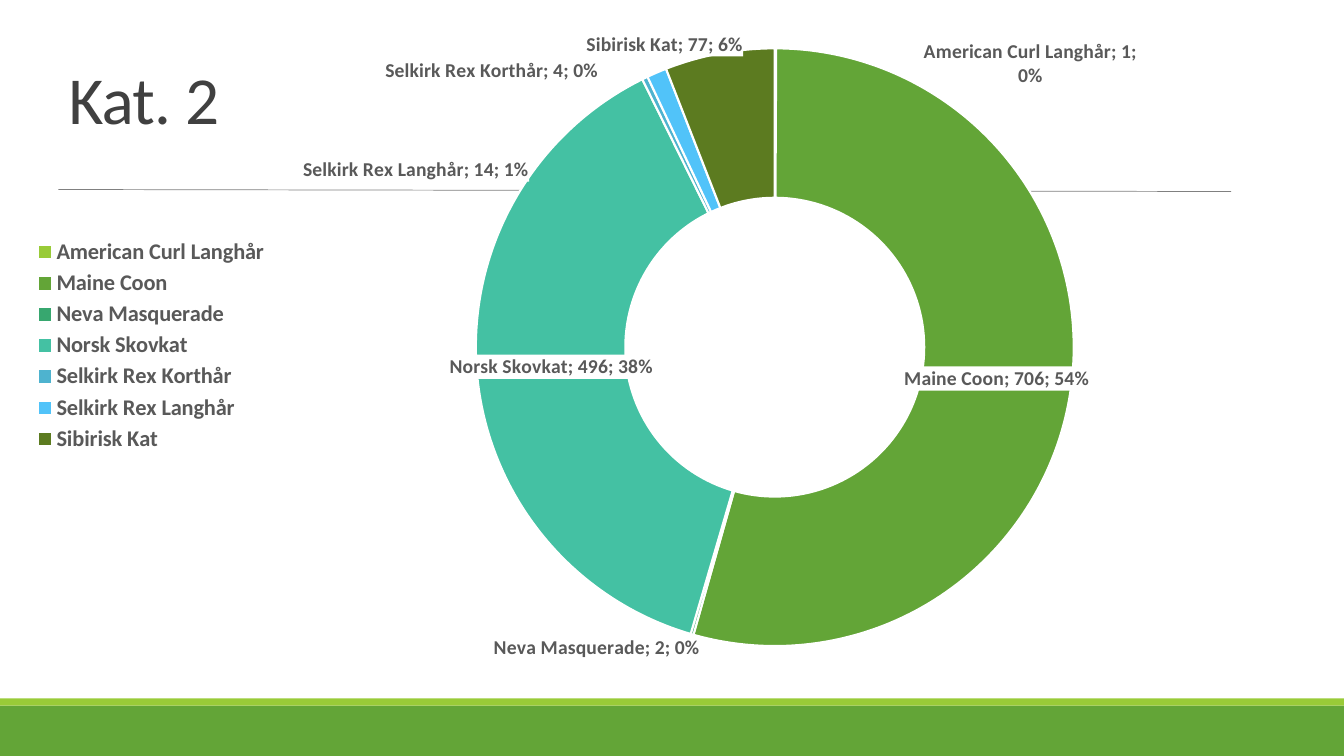
from copy import deepcopy
from dataclasses import dataclass

from pptx import Presentation
from pptx.chart.chart import Chart
from pptx.chart.data import CategoryChartData
from pptx.dml.color import RGBColor
from pptx.enum.chart import XL_CHART_TYPE, XL_LEGEND_POSITION
from pptx.enum.shapes import MSO_CONNECTOR, MSO_SHAPE
from pptx.enum.text import MSO_ANCHOR, PP_ALIGN
from pptx.oxml import parse_xml
from pptx.oxml.ns import nsdecls, qn
from pptx.slide import Slide
from pptx.util import Inches, Pt

DOUGHNUT = XL_CHART_TYPE.DOUGHNUT
LEGEND_LEFT = XL_LEGEND_POSITION.LEFT
STRAIGHT = MSO_CONNECTOR.STRAIGHT
RECTANGLE = MSO_SHAPE.RECTANGLE
MIDDLE = MSO_ANCHOR.MIDDLE
ALIGN_LEFT = PP_ALIGN.LEFT

FONT = "Calibri"
COLORS = {
    "title": "404040",
    "text": "595959",
    "rule": "808080",
    "white": "FFFFFF",
    "lime": "99CB38",
    "green": "63A537",
    "emerald": "37A76F",
    "teal": "44C1A3",
    "blue": "4EB3CF",
    "sky": "51C3F9",
    "olive": "5C7B20",
}
SLIDE_WIDTH, SLIDE_HEIGHT = 13.33, 7.5
CHART_LEFT, CHART_TOP, CHART_WIDTH, CHART_HEIGHT = 0.2, 0.31, 12.66, 6.24


@dataclass(frozen=True)
class Breed:
    """A cat breed with its count, colour and label shift in inches."""

    name: str
    count: int
    color: str
    label_shift: tuple[float, float] | None = None


@dataclass(frozen=True)
class Band:
    """A full-width footer band."""

    top: float
    height: float
    color: str


BREEDS = [
    Breed("American Curl Langhår", 1, "lime", (2.53, -0.59)),
    Breed("Maine Coon", 706, "green"),
    Breed("Neva Masquerade", 2, "emerald", (-1.15, 0.86)),
    Breed("Norsk Skovkat", 496, "teal"),
    Breed("Selkirk Rex Korthår", 4, "blue", (-1.84, -0.74)),
    Breed("Selkirk Rex Langhår", 14, "sky", (-2.68, 0.28)),
    Breed("Sibirisk Kat", 77, "olive", (-0.68, -0.82)),
]
BANDS = [Band(7, 0.5, "green"), Band(6.93, 0.07, "lime")]


def rgb(name: str) -> RGBColor:
    """Return a named colour."""
    return RGBColor.from_string(COLORS[name])


def layout_xml(x: float, y: float, size: tuple[float, float] | None = None, inner: bool = False) -> str:
    """Describe a manual chart layout given in inches."""
    target = '<c:layoutTarget val="inner"/>' if inner else ""
    modes = extent = ""
    if size:
        modes = '<c:xMode val="edge"/><c:yMode val="edge"/>'
        extent = f'<c:w val="{size[0] / CHART_WIDTH}"/><c:h val="{size[1] / CHART_HEIGHT}"/>'
    position = f'<c:x val="{x / CHART_WIDTH}"/><c:y val="{y / CHART_HEIGHT}"/>'
    return (
        f'<c:layout {nsdecls("c")}><c:manualLayout>{target}{modes}{position}{extent}'
        "</c:manualLayout></c:layout>"
    )


def add_band(slide: Slide, band: Band) -> None:
    """Draw a footer band."""
    shape = slide.shapes.add_shape(
        RECTANGLE, 0, Inches(band.top), Inches(SLIDE_WIDTH), Inches(band.height)
    )
    shape.shadow.inherit = False
    shape.fill.solid()
    shape.fill.fore_color.rgb = rgb(band.color)
    shape.line.fill.background()


def add_rule(slide: Slide) -> None:
    """Draw the thin line below the title."""
    rule = slide.shapes.add_connector(
        STRAIGHT, Inches(0.58), Inches(1.88), Inches(12.21), Inches(1.9)
    )
    rule.line.color.rgb = rgb("rule")
    rule.line.width = Pt(0.5)
    rule._element.spPr.append(parse_xml(f'<a:effectLst {nsdecls("a")}/>'))


def format_title(slide: Slide) -> None:
    """Fill and place the title."""
    title = slide.shapes.title
    title.left, title.top = Inches(0.58), Inches(0.31)
    title.width, title.height = Inches(11.62), Inches(1.45)
    title.text_frame.text = "Kat. 2"
    title.text_frame.vertical_anchor = MIDDLE
    paragraph = title.text_frame.paragraphs[0]
    paragraph.alignment = ALIGN_LEFT
    paragraph.line_spacing = 0.85
    run = paragraph.runs[0]
    run.font.name = FONT
    run.font.size = Pt(48)
    run.font.color.rgb = rgb("title")
    run._r.get_or_add_rPr().set("spc", "-50")


def format_legend(chart: Chart) -> None:
    """Place the legend at the left."""
    chart.has_legend = True
    legend = chart.legend
    legend.position = LEGEND_LEFT
    legend.include_in_layout = False
    legend.font.name = FONT
    legend.font.size = Pt(16)
    legend.font.bold = True
    legend.font.color.rgb = rgb("text")
    for layout in legend._element.findall(qn("c:layout")):
        legend._element.remove(layout)
    position = legend._element.find(qn("c:legendPos"))
    position.addnext(parse_xml(layout_xml(0.1, 2.02, (2.4, 2.2))))


def format_labels(chart: Chart) -> None:
    """Show name, count and share, and move the small slices' labels."""
    labels = chart.plots[0].series[0].data_labels
    labels.show_value = labels.show_category_name = labels.show_percentage = True
    labels.font.name = FONT
    labels.font.size = Pt(14)
    labels.font.bold = True
    labels.font.color.rgb = rgb("text")
    element = labels._element
    for leader in element.findall(qn("c:showLeaderLines")):
        element.remove(leader)
    element.find(qn("c:txPr")).addprevious(parse_xml(
        f'<c:spPr {nsdecls("c", "a")}><a:solidFill><a:srgbClr val="{COLORS["white"]}"/>'
        "</a:solidFill><a:ln><a:noFill/></a:ln></c:spPr>"
    ))
    element.append(parse_xml(f'<c:separator {nsdecls("c")}>; </c:separator>'))
    settings = list(element)
    for index, breed in enumerate(BREEDS):
        if breed.label_shift:
            label = parse_xml(f'<c:dLbl {nsdecls("c")}><c:idx val="{index}"/></c:dLbl>')
            label.append(parse_xml(layout_xml(*breed.label_shift)))
            label.extend(deepcopy(setting) for setting in settings)
            settings[0].addprevious(label)
    element.append(parse_xml(f'<c:showLeaderLines {nsdecls("c")} val="0"/>'))


def add_breed_chart(slide: Slide) -> None:
    """Draw the doughnut of breeds."""
    data = CategoryChartData()
    data.categories = [breed.name for breed in BREEDS]
    data.add_series("Series 1", [breed.count for breed in BREEDS])
    chart = slide.shapes.add_chart(
        DOUGHNUT, Inches(CHART_LEFT), Inches(CHART_TOP), Inches(CHART_WIDTH), Inches(CHART_HEIGHT), data
    ).chart
    chart.has_title = False
    chart.font.name = FONT
    chart.font.size = Pt(10)
    plot = chart.plots[0]
    plot.vary_by_categories = True
    plot._element.find(qn("c:holeSize")).set("val", "35")
    for index, breed in enumerate(BREEDS):
        point = plot.series[0].points[index]
        point.format.fill.solid()
        point.format.fill.fore_color.rgb = rgb(breed.color)
        point.format.line.color.rgb = rgb("white")
        point.format.line.width = Pt(1.5)
    plot_area = plot._element.getparent()
    for layout in plot_area.findall(qn("c:layout")):
        plot_area.remove(layout)
    plot_area.insert(0, parse_xml(layout_xml(4.52, 0.17, (5.93, 5.93), inner=True)))
    format_legend(chart)
    format_labels(chart)


def main() -> None:
    """Build and save the slide."""
    presentation = Presentation()
    presentation.slide_width = Inches(SLIDE_WIDTH)
    presentation.slide_height = Inches(SLIDE_HEIGHT)
    slide = presentation.slides.add_slide(presentation.slide_layouts[5])
    for band in BANDS:
        add_band(slide, band)
    add_rule(slide)
    format_title(slide)
    add_breed_chart(slide)
    presentation.save("out.pptx")


if __name__ == "__main__":
    main()
